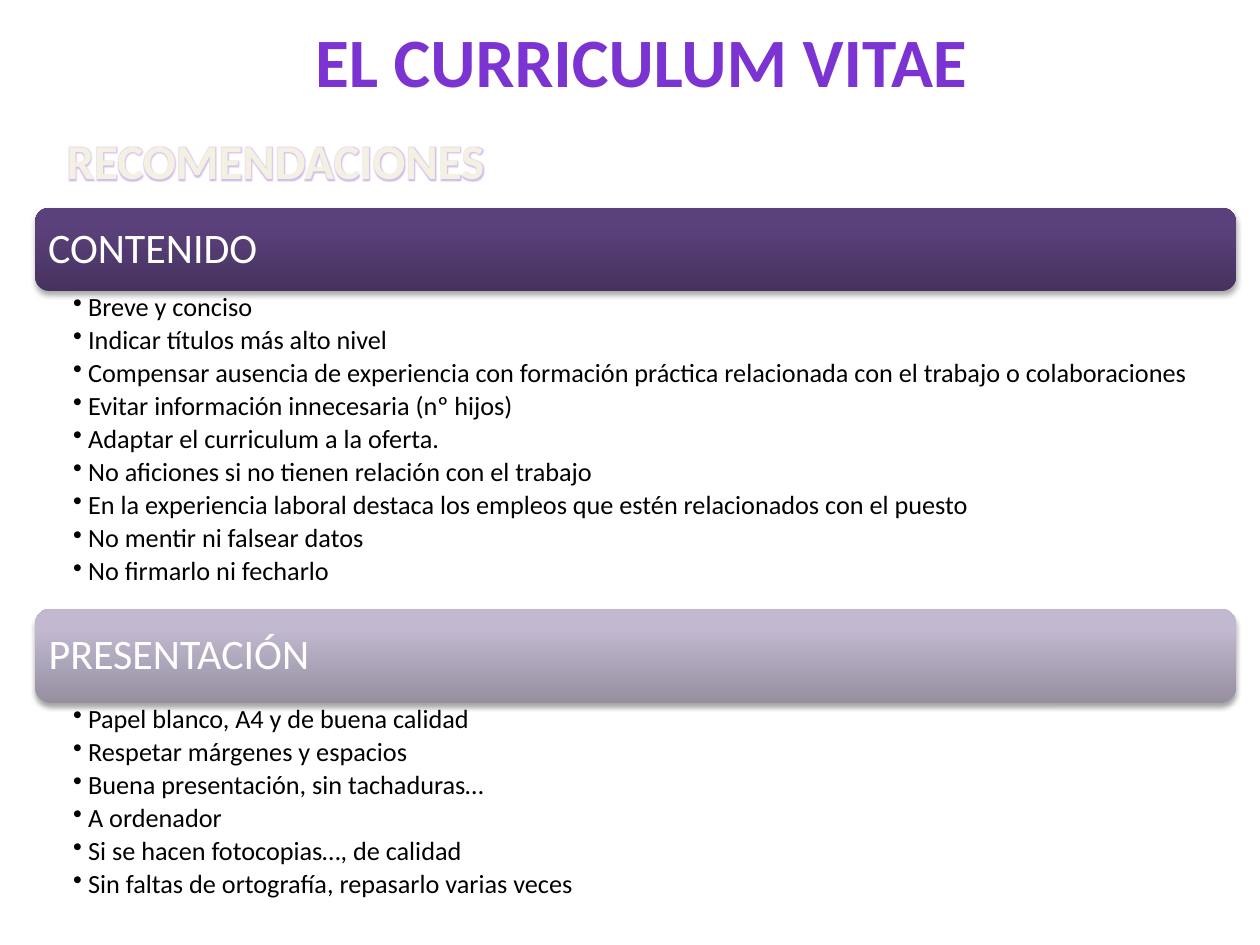
from lxml.etree import SubElement
from pptx import Presentation
from pptx.dml.color import RGBColor
from pptx.enum.shapes import MSO_SHAPE
from pptx.enum.text import MSO_ANCHOR, PP_ALIGN
from pptx.oxml import parse_xml
from pptx.oxml.ns import nsdecls, qn
from pptx.util import Inches, Pt

VIOLET = RGBColor(0x7B, 0x34, 0xD2)
CREAM = RGBColor(0xF4, 0xF1, 0xE3)
LILAC = RGBColor(0xB4, 0x90, 0xE0)
WHITE = RGBColor(0xFF, 0xFF, 0xFF)
BLACK = RGBColor(0x00, 0x00, 0x00)
DARK_BAND = [(0, RGBColor(0x46, 0x32, 0x5F)), (80, RGBColor(0x5B, 0x41, 0x7B)),
             (100, RGBColor(0x5B, 0x40, 0x7C))]
PALE_BAND = [(0, RGBColor(0x96, 0x8F, 0xA0)), (80, RGBColor(0xC2, 0xB9, 0xD0)),
             (100, RGBColor(0xC3, 0xBA, 0xD1))]

LEFT, WIDTH = 0.28, 9.53
SECTIONS = [
    ("CONTENIDO", 1.65, 0.66, 2.52, DARK_BAND, [
        "Breve y conciso",
        "Indicar títulos más alto nivel",
        "Compensar ausencia de experiencia con formación práctica relacionada con el trabajo o colaboraciones",
        "Evitar información innecesaria (nº hijos)",
        "Adaptar el curriculum a la oferta.",
        "No aficiones si no tienen relación con el trabajo",
        "En la experiencia laboral destaca los empleos que estén relacionados con el puesto",
        "No mentir ni falsear datos",
        "No firmarlo ni fecharlo",
    ]),
    ("PRESENTACIÓN", 4.83, 0.75, 1.68, PALE_BAND, [
        "Papel blanco, A4 y de buena calidad",
        "Respetar márgenes y espacios",
        "Buena presentación, sin tachaduras…",
        "A ordenador",
        "Si se hacen fotocopias…, de calidad",
        "Sin faltas de ortografía, repasarlo varias veces",
    ]),
]


def write(shape, lines, size, color, bold=False, align=PP_ALIGN.LEFT,
          anchor=MSO_ANCHOR.TOP, insets=(0.1, 0.05, 0.1, 0.05),
          spacing=1.0, after=0, bullet=False):
    """Fill a shape with one paragraph per line; insets run left, top, right, bottom."""
    frame = shape.text_frame
    frame.word_wrap = True
    frame.vertical_anchor = anchor
    (frame.margin_left, frame.margin_top,
     frame.margin_right, frame.margin_bottom) = map(Inches, insets)
    for number, line in enumerate(lines):
        para = frame.add_paragraph() if number else frame.paragraphs[0]
        para.alignment = align
        para.line_spacing = spacing
        para.space_after = Pt(after)
        if bullet:
            properties = para._p.get_or_add_pPr()
            properties.set("marL", str(Inches(0.12)))
            properties.set("indent", str(-Inches(0.12)))
            SubElement(properties, qn("a:buChar"), char="•")
        span = para.add_run()
        span.text = line
        span.font.name = "Calibri"
        span.font.size = Pt(size)
        span.font.bold = bold
        span.font.color.rgb = color


def style_band(band, stops):
    """Give a band its upward gradient and its soft shadow below."""
    band.line.fill.background()
    band.fill.gradient()
    band.fill.gradient_angle = 90
    stop_list = band._element.spPr.find(qn("a:gradFill")).find(qn("a:gsLst"))
    for stop in list(stop_list):
        stop_list.remove(stop)
    for position, color in stops:
        stop = SubElement(stop_list, qn("a:gs"), pos=str(position * 1000))
        SubElement(stop, qn("a:srgbClr"), val=str(color))
    band.shadow.inherit = False
    effects = band._element.spPr.find(qn("a:effectLst"))
    effects.append(parse_xml(
        f'<a:outerShdw {nsdecls("a")} blurRad="{Pt(3.1)}" dist="{Pt(1.8)}" '
        'dir="5400000" rotWithShape="0"><a:srgbClr val="000000">'
        '<a:alpha val="35000"/></a:srgbClr></a:outerShdw>'))


deck = Presentation()
deck.slide_width, deck.slide_height = Inches(10), Inches(7.5)
page = deck.slides.add_slide(deck.slide_layouts[6])

heading = page.shapes.add_textbox(Inches(0.43), Inches(0.99), Inches(4.02), Inches(0.58))
write(heading, ["RECOMENDACIONES"], 28, CREAM, bold=True)
heading_fill = heading.text_frame.paragraphs[0].runs[0].font._element.find(qn("a:solidFill"))
heading_fill.addnext(parse_xml(
    f'<a:effectLst {nsdecls("a")}><a:glow rad="{Pt(2)}"><a:srgbClr val="{LILAC}">'
    '<a:alpha val="60000"/></a:srgbClr></a:glow></a:effectLst>'))

title = page.shapes.add_textbox(Inches(0.59), Inches(0.13), Inches(9), Inches(0.69))
write(title, ["EL CURRICULUM VITAE"], 39.6, VIOLET, bold=True,
      align=PP_ALIGN.CENTER, anchor=MSO_ANCHOR.MIDDLE)

for name, top, band_height, list_height, stops, items in SECTIONS:
    band = page.shapes.add_shape(MSO_SHAPE.ROUNDED_RECTANGLE, Inches(LEFT), Inches(top),
                                 Inches(WIDTH), Inches(band_height))
    style_band(band, stops)
    write(band, [name], 24, WHITE, anchor=MSO_ANCHOR.MIDDLE,
          insets=(0.07, 0.07, 0.07, 0.07), spacing=0.9)
    item_list = page.shapes.add_textbox(Inches(LEFT), Inches(top + band_height),
                                        Inches(WIDTH), Inches(list_height))
    write(item_list, items, 15, BLACK, insets=(0.3, 0.02, 0.12, 0.02),
          spacing=0.9, after=2.7, bullet=True)

deck.save("out.pptx")
